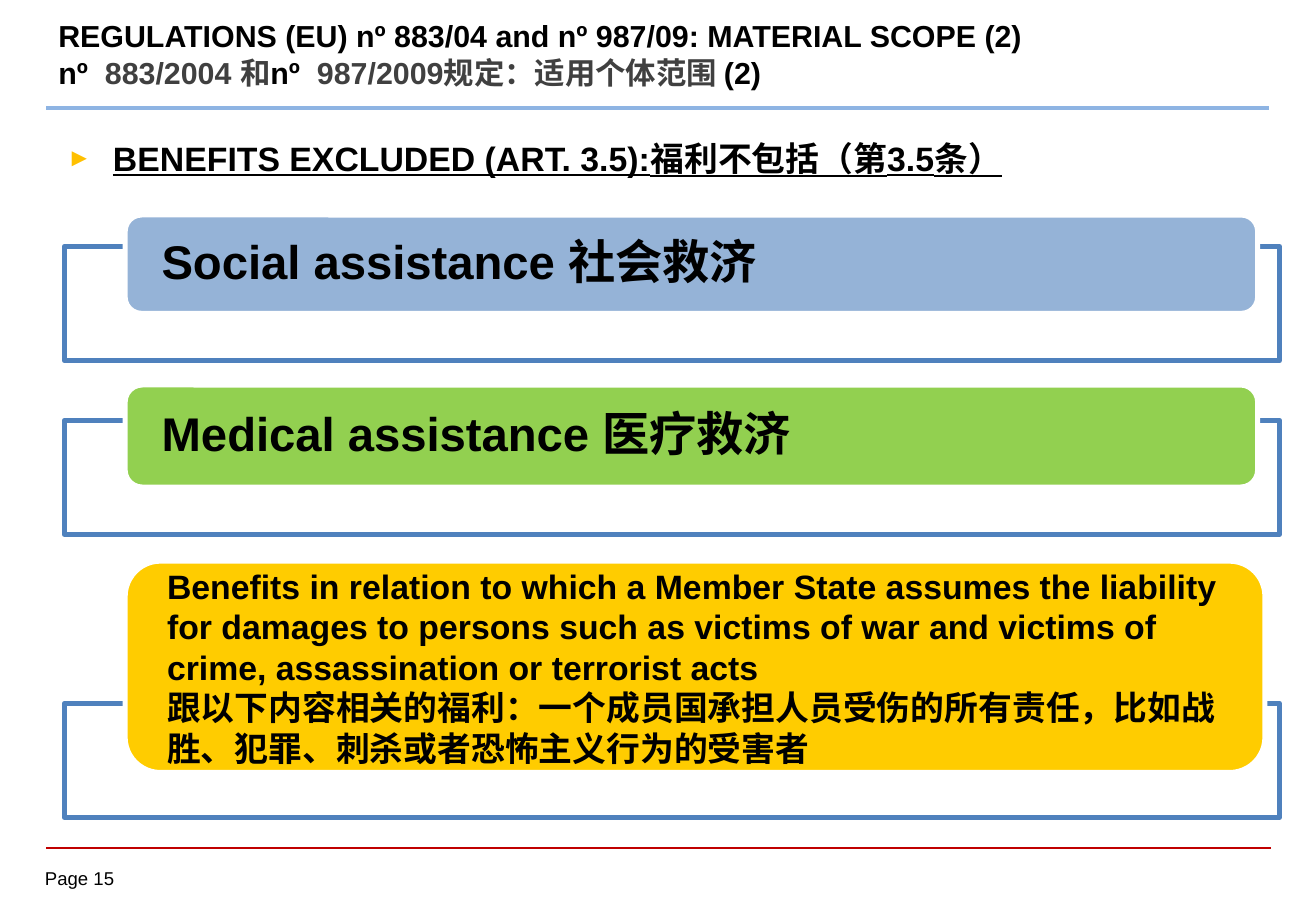
from lxml import etree
from pptx import Presentation
from pptx.dml.color import RGBColor
from pptx.enum import shapes, text
from pptx.oxml import ns
from pptx.util import Inches, Pt

COLORS = {
    "ink": "000000", "grey": "404040", "white": "FFFFFF", "frame": "4F81BD",
    "header": "8EB4E3", "footer": "C00000", "bullet": "FFC000",
    "social": "95B3D7", "medical": "92D050", "liability": "FFCC00",
}
HEADING = [
    [("REGULATIONS (EU) nº 883/04 and nº 987/09: MATERIAL SCOPE (2)", "ink")],
    [("nº  ", "ink"), ("883/2004 和", "grey"), ("nº  ", "ink"),
     ("987/2009规定：适用个体范围 ", "grey"), ("(2)", "ink")],
]
EXCLUDED = "BENEFITS EXCLUDED (ART. 3.5):福利不包括（第3.5条）"
PAGE = "Page 15"
RULES = [(0.89, 10.44, "header", 2), (6.98, 10.46, "footer", 1)]
LABEL_INSET = 0.26
BENEFITS = [
    {"lines": ["Social assistance 社会救济"], "color": "social", "size": 28,
     "top": 1.77, "width": 9.32, "height": 0.81, "frame": 2.03, "spacing": 0.9},
    {"lines": ["Medical assistance 医疗救济"], "color": "medical", "size": 28,
     "top": 3.17, "width": 9.32, "height": 0.84, "frame": 3.46, "spacing": 0.9},
    {"lines": ["Benefits in relation to which a Member State assumes the liability for damages "
               "to persons such as victims of war and victims of crime, assassination or terrorist acts",
               "跟以下内容相关的福利：一个成员国承担人员受伤的所有责任，比如战胜、犯罪、刺杀或者恐怖主义行为的受害者"],
     "color": "liability", "size": 20,
     "top": 4.62, "width": 9.38, "height": 1.74, "frame": 5.79, "spacing": 1.0},
]


def rgb(name):
    return RGBColor.from_string(COLORS[name])


def style(font, size, color="ink", bold=True):
    font.name, font.size, font.bold = "Arial", Pt(size), bold
    font.color.rgb = rgb(color)


def place(part, left, top, width, height):
    part.left, part.top = Inches(left), Inches(top)
    part.width, part.height = Inches(width), Inches(height)


def add_box(preset, left, top, width, height, fill, line):
    box = slide.shapes.add_shape(preset, Inches(left), Inches(top), Inches(width), Inches(height))
    box.shadow.inherit = False
    box.fill.solid()
    box.fill.fore_color.rgb = rgb(fill)
    box.line.color.rgb = rgb(line)
    box.line.width = Pt(3)
    return box


def set_insets(frame, side):
    frame.margin_left = frame.margin_right = Inches(side)
    frame.margin_top = frame.margin_bottom = 0


deck = Presentation()
deck.slide_width, deck.slide_height = Inches(10.83), Inches(7.5)
slide = deck.slides.add_slide(deck.slide_layouts[1])

for y, right, color, weight in RULES:
    rule = slide.shapes.add_connector(
        shapes.MSO_CONNECTOR.STRAIGHT, Inches(0.38), Inches(y), Inches(right), Inches(y))
    rule.line.color.rgb = rgb(color)
    rule.line.width = Pt(weight)
    etree.SubElement(rule._element.spPr, ns.qn("a:effectLst"))

page = slide.shapes.add_textbox(Inches(0.37), Inches(7.14), Inches(0.73), Inches(0.22)).text_frame
set_insets(page, 0)
page.word_wrap = True
page.text = PAGE
style(page.paragraphs[0].runs[0].font, 11, bold=False)

heading = slide.shapes.title
place(heading, 0.38, 0.09, 9.92, 0.71)
heading.text_frame.vertical_anchor = text.MSO_ANCHOR.MIDDLE
heading.text_frame.text = "\n".join("" for _ in HEADING)
for paragraph, pieces in zip(heading.text_frame.paragraphs, HEADING):
    paragraph.alignment = text.PP_ALIGN.LEFT
    for words, color in pieces:
        run = paragraph.add_run()
        run.text = words
        style(run.font, 18, color)

excluded = slide.placeholders[1]
place(excluded, 0.45, 1.08, 9.84, 5.63)
excluded.text_frame.text = EXCLUDED
paragraph = excluded.text_frame.paragraphs[0]
props = paragraph._p.get_or_add_pPr()
props.set("marL", str(Inches(0.38)))
props.set("indent", str(-Inches(0.38)))
bullet_color = etree.SubElement(props, ns.qn("a:buClr"))
etree.SubElement(bullet_color, ns.qn("a:srgbClr"), val=COLORS["bullet"])
etree.SubElement(props, ns.qn("a:buSzPct"), val="75000")
etree.SubElement(props, ns.qn("a:buFont"), typeface="Arial")
etree.SubElement(props, ns.qn("a:buChar"), char="►")
paragraph.space_before = Pt(0)
style(paragraph.runs[0].font, 20)
paragraph.runs[0].font.underline = True

for benefit in BENEFITS:
    frame = add_box(shapes.MSO_SHAPE.RECTANGLE, 0.53, benefit["frame"], 10, 0.94, "white", "frame")
    fill_color = frame._element.spPr.find(ns.qn("a:solidFill"))[0]
    etree.SubElement(fill_color, ns.qn("a:alpha"), val="90000")
    label = add_box(shapes.MSO_SHAPE.ROUNDED_RECTANGLE, 1.03, benefit["top"], benefit["width"],
                    benefit["height"], benefit["color"], "white").text_frame
    set_insets(label, LABEL_INSET)
    label.word_wrap = True
    label.vertical_anchor = text.MSO_ANCHOR.MIDDLE
    label.text = "\n".join(benefit["lines"])
    for paragraph in label.paragraphs:
        paragraph.alignment = text.PP_ALIGN.LEFT
        paragraph.line_spacing = benefit["spacing"]
        style(paragraph.runs[0].font, benefit["size"])

deck.save("out.pptx")
